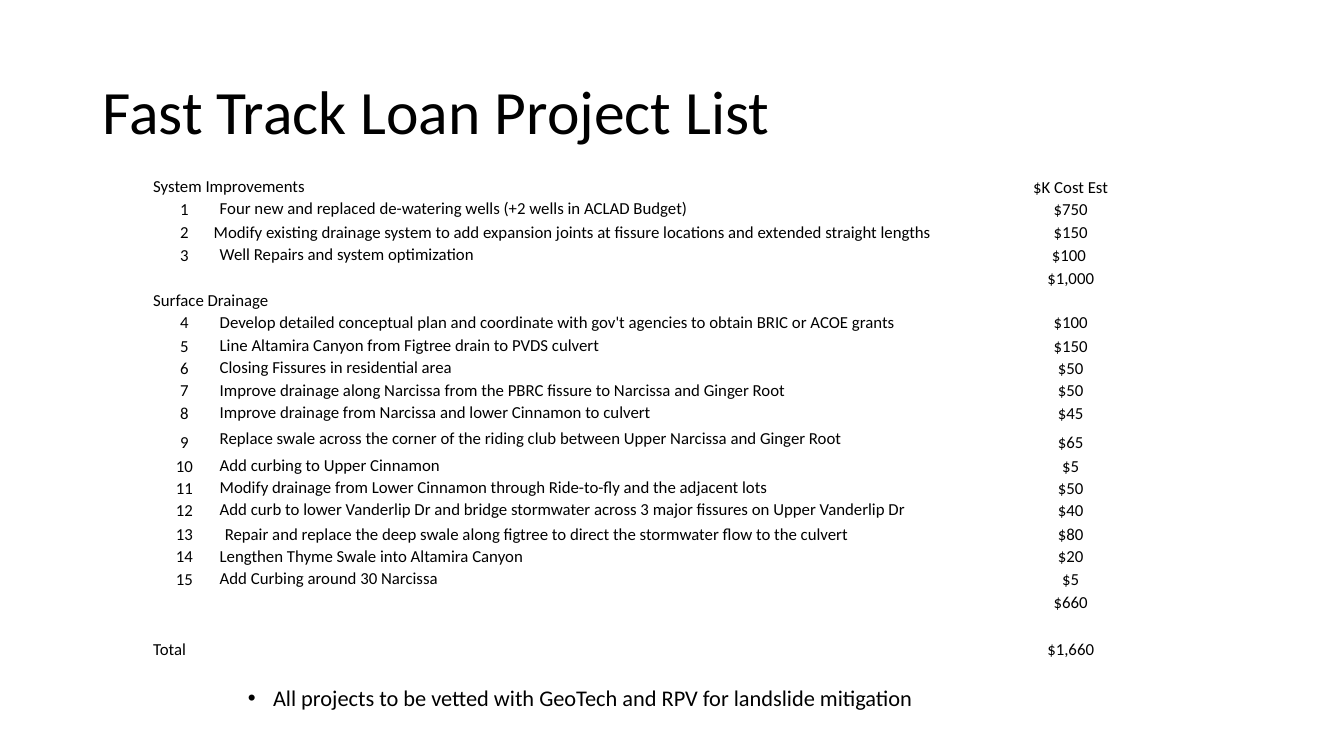
from lxml import etree
from pptx import Presentation
from pptx.dml.color import RGBColor
from pptx.enum.text import MSO_ANCHOR as Anchor, PP_ALIGN as Align
from pptx.oxml.ns import qn
from pptx.util import Inches, Pt

BLACK = RGBColor(0x00, 0x00, 0x00)
WHITE = RGBColor(0xFF, 0xFF, 0xFF)
FONT = "Calibri"
ITEM_INDENT = 0.22


def write(frame, text, size=12, align=Align.LEFT, spacing=None):
    paragraph = frame.paragraphs[0]
    paragraph.alignment = align
    paragraph.line_spacing = spacing
    # An empty cell keeps its text size through the paragraph font.
    font = paragraph.font
    if text:
        run = paragraph.add_run()
        run.text = text
        font = run.font
    font.name = FONT
    font.size = Pt(size)
    font.color.rgb = BLACK
    return paragraph


presentation = Presentation()
presentation.slide_width = Inches(13.33)
presentation.slide_height = Inches(7.5)
slide = presentation.slides.add_slide(presentation.slide_layouts[6])

# Title
title = slide.shapes.add_textbox(Inches(0.92), Inches(0.41), Inches(10.25), Inches(1.45))
title.text_frame.word_wrap = True
title.text_frame.vertical_anchor = Anchor.MIDDLE
write(title.text_frame, "Fast Track Loan Project List", size=44, spacing=0.9)

# Closing note
note = slide.shapes.add_textbox(Inches(2.36), Inches(6.77), Inches(8.81), Inches(0.43))
note.text_frame.word_wrap = True
paragraph = write(
    note.text_frame,
    "All projects to be vetted with GeoTech and RPV for landslide mitigation",
    size=16,
    spacing=0.9,
)
paragraph.space_before = Pt(10)
properties = paragraph._p.get_or_add_pPr()
properties.set("marL", str(Inches(0.25)))
properties.set("indent", str(-Inches(0.25)))
etree.SubElement(properties, qn("a:buFont")).set("typeface", "Arial")
etree.SubElement(properties, qn("a:buChar")).set("char", "•")

# Project table: heading, number, project, cost
ROWS = [
    ("System Improvements", "", "", "$K Cost Est"),
    ("", "1", "Four new and replaced de-watering wells (+2 wells in ACLAD Budget)", "$750"),
    ("", "2", "Modify existing drainage system to add expansion joints at fissure locations "
              "and extended straight lengths", "$150"),
    ("", "3", "Well Repairs and system optimization", "$100 "),
    ("", "", "", "$1,000"),
    ("Surface Drainage", "", "", ""),
    ("", "4", "Develop detailed conceptual plan and coordinate with gov't agencies "
              "to obtain BRIC or ACOE grants", "$100"),
    ("", "5", "Line Altamira Canyon from Figtree drain to PVDS culvert", "$150"),
    ("", "6", "Closing Fissures in residential area", "$50"),
    ("", "7", "Improve drainage along Narcissa from the PBRC fissure to Narcissa and Ginger Root", "$50"),
    ("", "8", "Improve drainage from Narcissa and lower Cinnamon to culvert", "$45"),
    ("", "9", "Replace swale across the corner of the riding club between Upper Narcissa "
              "and Ginger Root", "$65"),
    ("", "10", "Add curbing to Upper Cinnamon", "$5"),
    ("", "11", "Modify drainage from Lower Cinnamon through Ride-to-fly and the adjacent lots", "$50"),
    ("", "12", "Add curb to lower Vanderlip Dr and bridge stormwater across 3 major fissures "
               "on Upper Vanderlip Dr", "$40"),
    ("", "13", "Repair and replace the deep swale along figtree to direct the stormwater flow "
               "to the culvert", "$80"),
    ("", "14", "Lengthen Thyme Swale into Altamira Canyon", "$20"),
    ("", "15", "Add Curbing around 30 Narcissa", "$5"),
    ("", "", "", "$660"),
    ("", "", "", ""),
    ("Total", "", "", "$1,660"),
]
COLUMN_WIDTHS = [0.19, 0.26, 8.12, 1.08]
COLUMN_ALIGNS = [Align.LEFT, Align.CENTER, Align.LEFT, Align.CENTER]
ROW_HEIGHT = 0.23
OTHER_HEIGHTS = {row: 0.22 for row in (1, 5, 6, 8, 9, 13, 14, 16)} | {11: 0.29, 15: 0.24}
HEADING_SPANS = {"System Improvements": 3, "Surface Drainage": 3, "Total": 2}
# These two projects sit at the bottom of their cells, with their own indent.
BOTTOM_INDENTS = {"2": 0.16, "13": 0.27}

table = slide.shapes.add_table(
    len(ROWS), len(COLUMN_WIDTHS), Inches(1.51), Inches(1.73), Inches(9.65), Inches(4.82)
).table
table.first_row = False
table.horz_banding = False
for column, width in zip(table.columns, COLUMN_WIDTHS):
    column.width = Inches(width)

for row_index, values in enumerate(ROWS):
    table.rows[row_index].height = Inches(OTHER_HEIGHTS.get(row_index, ROW_HEIGHT))
    heading, number, project, cost = values
    for column_index, text in enumerate(values):
        cell = table.cell(row_index, column_index)
        cell.fill.solid()
        cell.fill.fore_color.rgb = WHITE
        cell.margin_left = cell.margin_right = cell.margin_top = Inches(0.01)
        cell.margin_bottom = 0
        cell.vertical_anchor = Anchor.BOTTOM
        if text and column_index == 2:
            cell.margin_left = Inches(BOTTOM_INDENTS.get(number, ITEM_INDENT))
            if number not in BOTTOM_INDENTS:
                cell.vertical_anchor = Anchor.MIDDLE
        write(cell.text_frame, text, align=COLUMN_ALIGNS[column_index])
    if heading:
        table.cell(row_index, 0).merge(table.cell(row_index, HEADING_SPANS[heading] - 1))
table.cell(0, 0).vertical_anchor = Anchor.MIDDLE

presentation.save("out.pptx")
